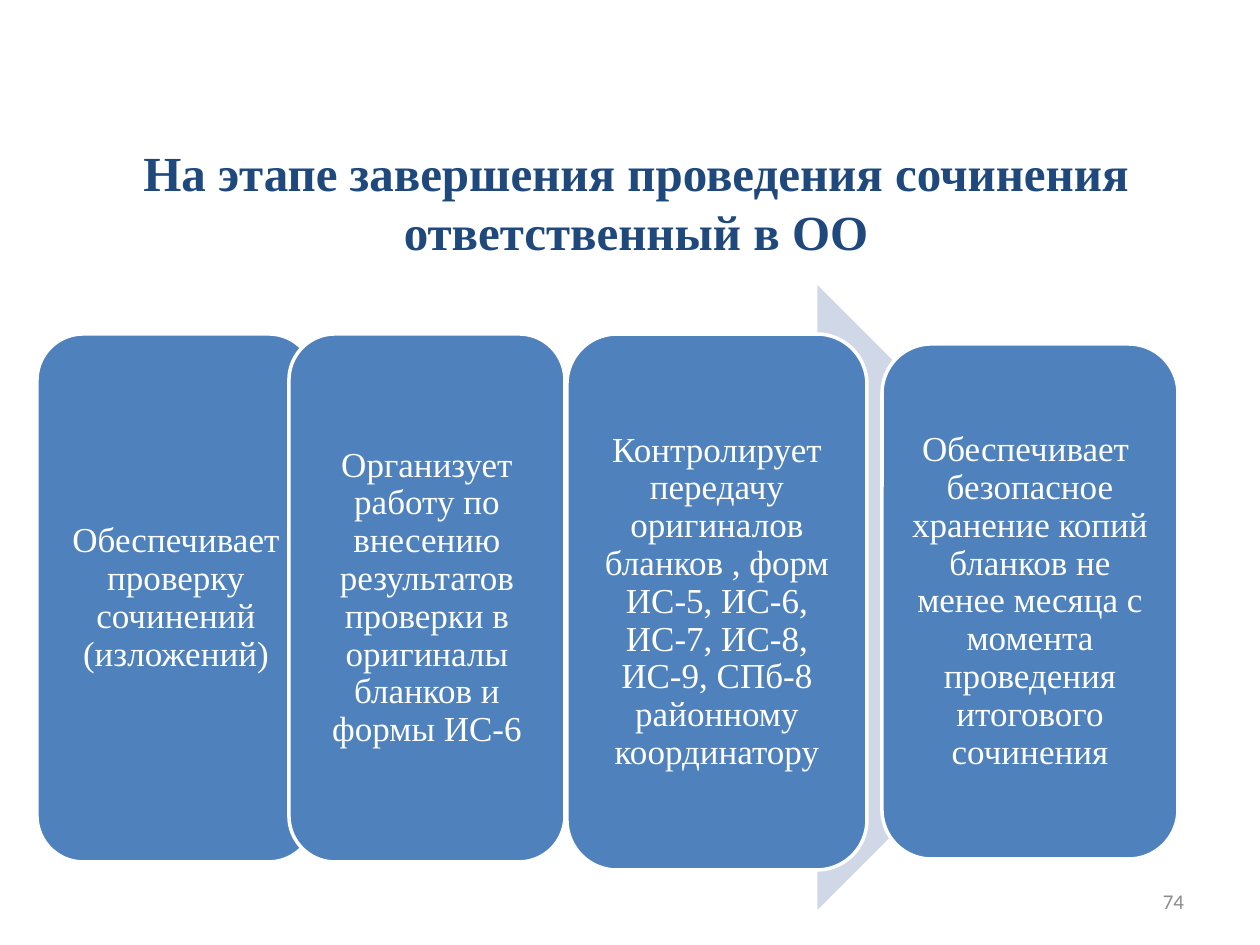
from pptx import Presentation
from pptx.dml.color import RGBColor
from pptx.enum.shapes import MSO_SHAPE
from pptx.enum.text import MSO_ANCHOR, PP_ALIGN
from pptx.util import Emu, Pt

COLORS = {
    "title": "1F497D",
    "step": "4F81BD",
    "arrow": "D0D8E8",
    "white": "FFFFFF",
    "number": "8C8C8C",
}
SERIF = "Times New Roman"


def px(*lengths):
    """Turn pixels (126 to the inch) into EMU."""
    return [Emu(round(length * 914400 / 126)) for length in lengths]


def write(part, text, size, color, font=SERIF, bold=False,
          align=PP_ALIGN.CENTER, spacing=1.0, insets=(13, 6)):
    frame = part.text_frame
    frame.word_wrap = True
    frame.vertical_anchor = MSO_ANCHOR.MIDDLE
    side, edge = px(*insets)
    frame.margin_left = frame.margin_right = side
    frame.margin_top = frame.margin_bottom = edge
    paragraph = frame.paragraphs[0]
    paragraph.alignment = align
    paragraph.line_spacing = spacing
    run = paragraph.add_run()
    run.text = text
    run.font.name = font
    run.font.size = Pt(size)
    run.font.bold = bold
    run.font.color.rgb = RGBColor.from_string(COLORS[color])


deck = Presentation()
deck.slide_width, deck.slide_height = px(1260, 945)
slide = deck.slides.add_slide(deck.slide_layouts[6])
shapes = slide.shapes

# Slide number and title
number = shapes.add_textbox(*px(903, 876, 294, 50))
write(number, "74", 12, "number", font="Calibri", align=PP_ALIGN.RIGHT)

title = shapes.add_textbox(*px(69, 137, 1134, 129))
write(title, "На этапе завершения проведения сочинения ответственный в ОО",
      28, "title", bold=True)

# Arrow behind the steps
arrow = shapes.add_shape(MSO_SHAPE.RIGHT_ARROW, *px(126, 285, 1004, 625))
arrow.shadow.inherit = False
arrow.fill.solid()
arrow.fill.fore_color.rgb = RGBColor.from_string(COLORS["arrow"])
arrow.line.fill.background()

# Steps: left, top, width, height, wording
steps = [
    (37, 334, 278, 528, "Обеспечивает проверку сочинений (изложений)"),
    (289, 334, 276, 528, "Организует работу по внесению результатов проверки "
                         "в оригиналы бланков и формы ИС-6"),
    (567, 334, 300, 536, "Контролирует передачу оригиналов бланков , форм "
                         "ИС-5, ИС-6, ИС-7, ИС-8, ИС-9, СПб-8 "
                         "районному координатору"),
    (882, 344, 296, 515, "Обеспечивает  безопасное хранение копий бланков "
                         "не менее месяца с момента проведения "
                         "итогового сочинения"),
]
for *place, wording in steps:
    step = shapes.add_shape(MSO_SHAPE.ROUNDED_RECTANGLE, *px(*place))
    step.shadow.inherit = False
    step.fill.solid()
    step.fill.fore_color.rgb = RGBColor.from_string(COLORS["step"])
    step.line.color.rgb = RGBColor.from_string(COLORS["white"])
    step.line.width = Pt(2)
    write(step, wording, 20, "white", spacing=0.9, insets=(10, 10))

deck.save("out.pptx")
